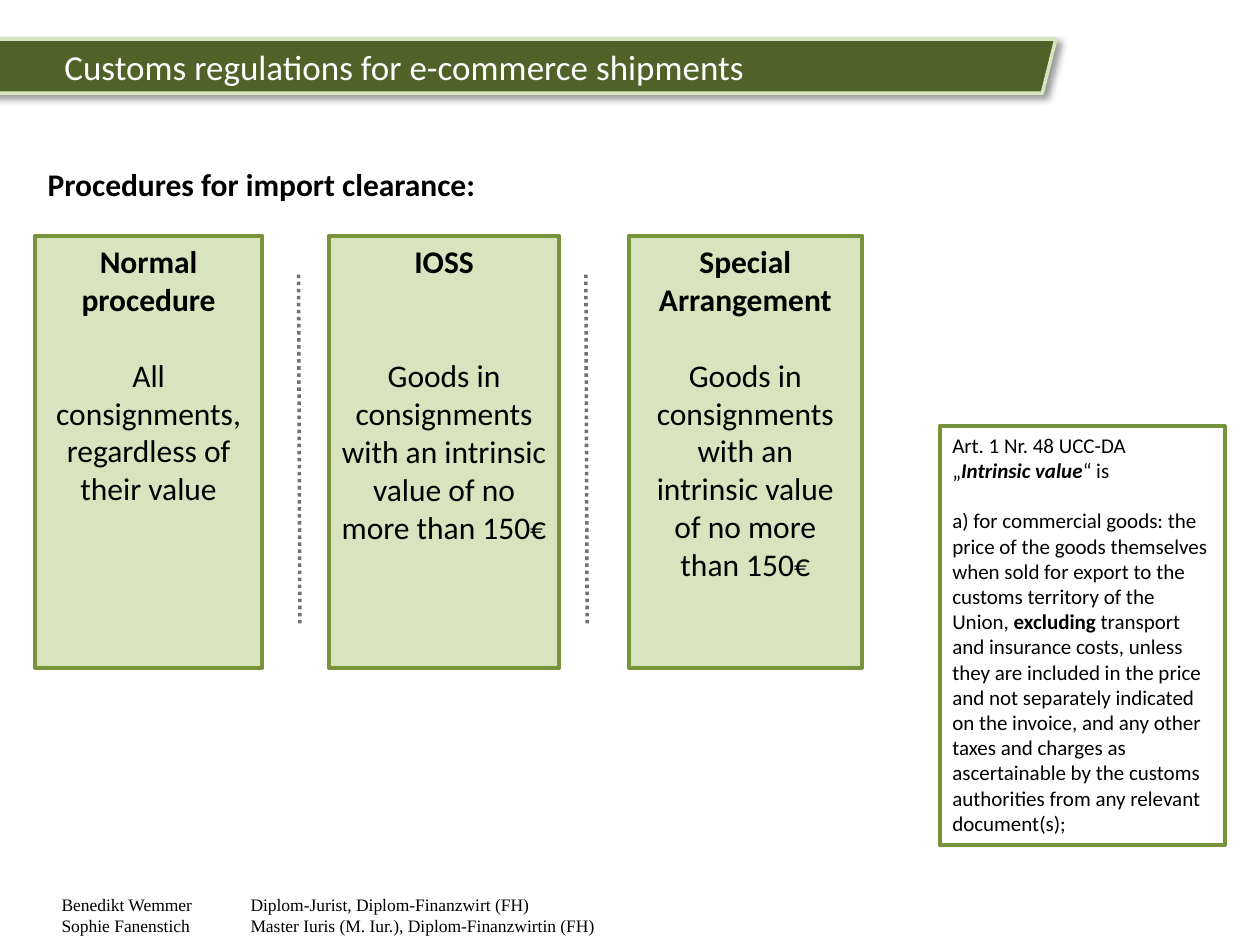
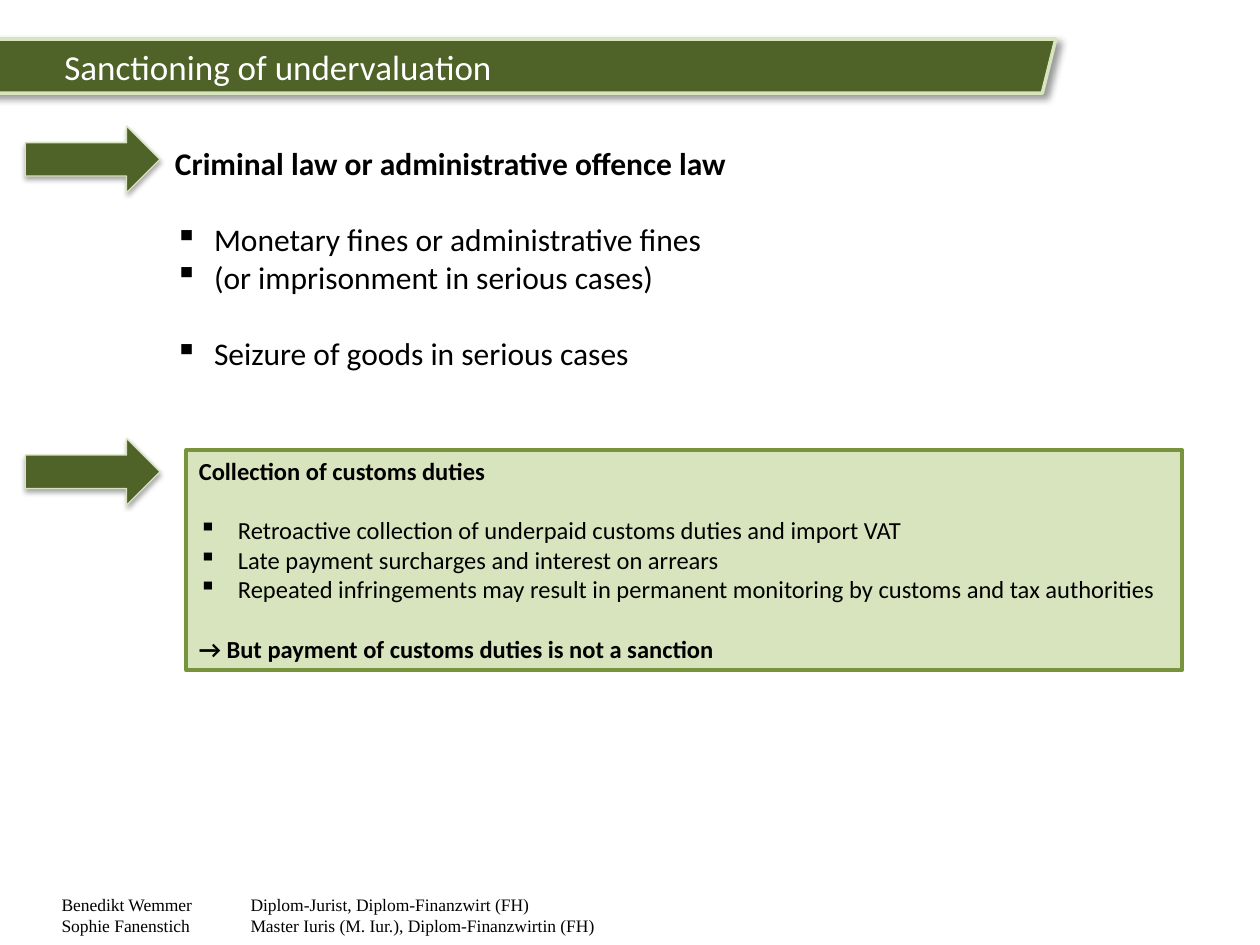
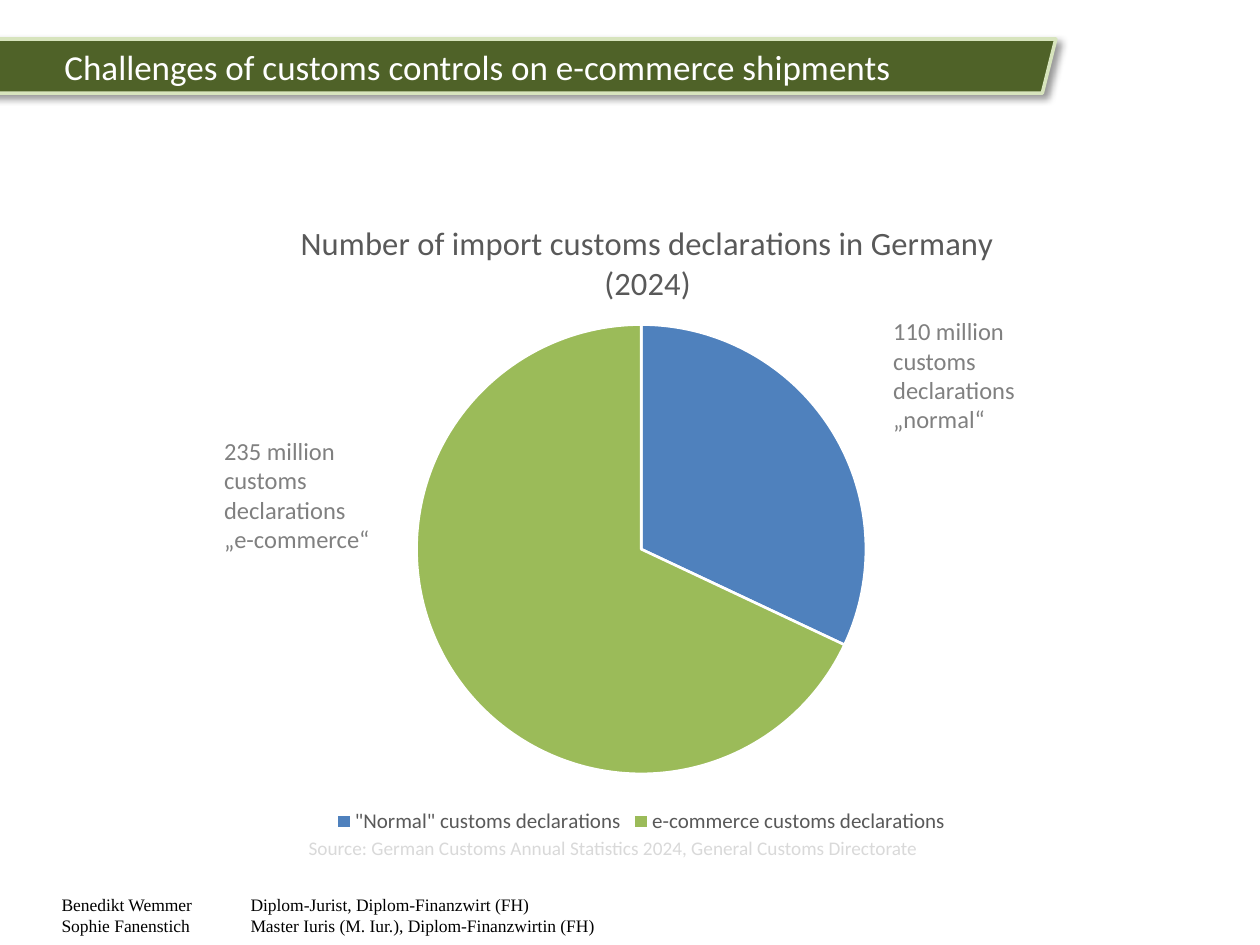
from lxml.etree import SubElement
from pptx import Presentation
from pptx.chart.data import CategoryChartData
from pptx.dml.color import RGBColor
from pptx.enum.chart import XL_CHART_TYPE, XL_LEGEND_POSITION
from pptx.enum.dml import MSO_LINE
from pptx.enum.shapes import MSO_CONNECTOR, MSO_SHAPE
from pptx.enum.text import MSO_ANCHOR, PP_ALIGN
from pptx.oxml.ns import qn
from pptx.util import Inches, Pt

DARK_GREEN = RGBColor(0x4F, 0x62, 0x28)
MID_GREEN = RGBColor(0x77, 0x93, 0x3C)
PALE_GREEN = RGBColor(0xD7, 0xE4, 0xBD)
PIE_BLUE = RGBColor(0x4F, 0x81, 0xBD)
PIE_GREEN = RGBColor(0x9B, 0xBB, 0x59)
SLATE = RGBColor(0x6C, 0x74, 0x7A)
DARK_GREY = RGBColor(0x59, 0x59, 0x59)
MID_GREY = RGBColor(0x80, 0x80, 0x80)
LIGHT_GREY = RGBColor(0xD9, 0xD9, 0xD9)
BLACK = RGBColor(0, 0, 0)
WHITE = RGBColor(0xFF, 0xFF, 0xFF)

LINE_HEIGHT = 1.22
INDENT = Inches(0.31)
BOLD = {"bold": True}
PANEL = {"fill": PALE_GREEN, "line": MID_GREEN, "width": 2.25}
# Shadows: opacity in percent, blur and distance in points, direction in degrees
BAND = {"fill": DARK_GREEN, "line": PALE_GREEN, "width": 2, "shadow": (40, 4, 3, 45)}
ARROW = {"fill": DARK_GREEN, "line": PALE_GREEN, "width": 0.75, "shadow": (35, 3.1, 1.8, 90)}

presentation = Presentation()
presentation.slide_width, presentation.slide_height = Inches(10), Inches(7.5)
# Square grid: 100 columns by 75 rows
CELL = presentation.slide_width // 100


def add_box(slide, box, preset=None, fill=None, line=None, width=1, shadow=None):
    """Add a preset shape, or a text box without one; box is in grid cells."""
    left, top, across, down = [int(cells * CELL) for cells in box]
    if preset is None:
        return slide.shapes.add_textbox(left, top, across, down)
    shape = slide.shapes.add_shape(preset, left, top, across, down)
    shape.shadow.inherit = False
    if fill is None:
        shape.fill.background()
    else:
        shape.fill.solid()
        shape.fill.fore_color.rgb = fill
    shape.line.color.rgb = line
    shape.line.width = Pt(width)
    if shadow:
        opacity, blur, distance, direction = shadow
        effects = shape._element.spPr.find(qn("a:effectLst"))
        outer = SubElement(effects, qn("a:outerShdw"), blurRad=str(Pt(blur)), dist=str(Pt(distance)),
                           dir=str(direction * 60000), algn="tl", rotWithShape="0")
        color = SubElement(outer, qn("a:srgbClr"), val="000000")
        SubElement(color, qn("a:alpha"), val=str(opacity * 1000))
    return shape


def write(shape, paragraphs, size, color=BLACK, font="Calibri", align=PP_ALIGN.LEFT,
          anchor=MSO_ANCHOR.TOP, wrap=True):
    """Each paragraph is (runs, lines of space before, bullet); each run is (text, format)."""
    frame = shape.text_frame
    frame.word_wrap = wrap
    frame.vertical_anchor = anchor
    for index, (runs, space, bullet) in enumerate(paragraphs):
        paragraph = frame.add_paragraph() if index else frame.paragraphs[0]
        paragraph.alignment = align
        paragraph.space_before = Pt(round(space * size * LINE_HEIGHT, 1))
        if bullet:
            properties = paragraph._p.get_or_add_pPr()
            properties.set("marL", str(INDENT))
            properties.set("indent", str(-INDENT))
            SubElement(properties, qn("a:buChar"), char="▪")
        for text, formats in runs:
            run = paragraph.add_run()
            run.text = text
            run.font.color.rgb = color
            for name, value in {"name": font, "size": Pt(size), **formats}.items():
                setattr(run.font, name, value)


# Shared by all slides: footer and title band
slides = []
for title in ("Customs regulations for e-commerce shipments",
              "Sanctioning of undervaluation",
              "Challenges of customs controls on e-commerce shipments"):
    slide = presentation.slides.add_slide(presentation.slide_layouts[6])
    footer = add_box(slide, (3.9, 70.5, 55.6, 4.4))
    write(footer, [([("Benedikt Wemmer\tDiplom-Jurist, Diplom-Finanzwirt (FH)", {})], 0, False),
                   ([("Sophie Fanenstich\tMaster Iuris (M. Iur.), Diplom-Finanzwirtin (FH)", {})], 0, False)],
          10, font="Times New Roman")
    for paragraph in footer.text_frame.paragraphs:
        tabs = SubElement(paragraph._p.get_or_add_pPr(), qn("a:tabLst"))
        SubElement(tabs, qn("a:tab"), pos=str(15 * CELL), algn="l")
    band = add_box(slide, (-3.6, 3.1, 87.4, 4.3), MSO_SHAPE.PARALLELOGRAM, **BAND)
    write(band, [([(title, {})], 0, False)], 20, WHITE, anchor=MSO_ANCHOR.MIDDLE)
    slides.append(slide)
procedures, sanctions, challenges = slides

# Slide 1: import procedures
for column in (23.7, 46.5):
    start_x, start_y, end_x, end_y = [int(cells * CELL) for cells in (column, 21.8, column + 0.1, 49.6)]
    divider = procedures.shapes.add_connector(MSO_CONNECTOR.STRAIGHT, start_x, start_y, end_x, end_y)
    divider.line.color.rgb = SLATE
    divider.line.width = Pt(2)
    divider.line.dash_style = MSO_LINE.ROUND_DOT
    SubElement(divider._element.spPr, qn("a:effectLst"))

for left, width, name, space, lines in (
        (2.8, 18, "Normal procedure", 1, ["All consignments, regardless of their value"]),
        (26.1, 18.3, "IOSS", 2, ["Goods in consignments with an intrinsic value of no more than 150€"]),
        (49.9, 18.5, "Special Arrangement", 1,
         ["Goods in consignments with an", "intrinsic value of no more", "than 150€"])):
    panel = add_box(procedures, (left, 18.7, width, 34.3), MSO_SHAPE.RECTANGLE, **PANEL)
    body = [([(line, {})], 0 if index else space, False) for index, line in enumerate(lines)]
    write(panel, [([(name, BOLD)], 0, False), *body], 18, align=PP_ALIGN.CENTER)

definition = add_box(procedures, (74.6, 33.8, 22.6, 33.3), MSO_SHAPE.RECTANGLE, line=MID_GREEN, width=2.25)
write(definition, [
    ([("Art. 1 Nr. 48 UCC-DA", {})], 0, False),
    ([("„", {}), ("Intrinsic value", {"bold": True, "italic": True}), ("“ is", {})], 0, False),
    ([("a) for commercial goods: the price of the goods themselves when sold for export to the "
       "customs territory of the Union, ", {}),
      ("excluding", BOLD),
      (" transport and insurance costs, unless they are included in the price and not separately "
       "indicated on the invoice, and any other taxes and charges as ascertainable by the customs "
       "authorities from any relevant document(s);", {})], 1, False)], 12)
heading = add_box(procedures, (2.8, 12.6, 52, 4))
write(heading, [([("Procedures for import clearance:", BOLD)], 0, False)], 18)

# Slide 2: sanctions and collection of duties
penalties = add_box(sanctions, (12.9, 10.9, 87.1, 28.3))
write(penalties, [
    ([("Criminal law or administrative offence law", BOLD)], 0, False),
    ([("Monetary fines or administrative fines", {})], 1, True),
    ([("(or imprisonment in serious cases)", {})], 0, True),
    ([("Seizure of goods in serious cases", {})], 1, True)], 18)
for top in (10, 34.8):
    add_box(sanctions, (2, top, 10.7, 5.3), MSO_SHAPE.RIGHT_ARROW, **ARROW)
collection = add_box(sanctions, (14.8, 35.7, 79, 17.5), MSO_SHAPE.RECTANGLE, **PANEL)
write(collection, [
    ([("Collection of customs duties", BOLD)], 0, False),
    ([("Retroactive collection of underpaid customs duties and import VAT", {})], 1, True),
    ([("Late payment surcharges and interest on arrears", {})], 0, True),
    ([("Repeated infringements may result in permanent monitoring by customs and tax authorities", {})],
     0, True),
    ([("→ But payment of customs duties is not a sanction", BOLD)], 1, False)], 14)

# Slide 3: share of e-commerce declarations
declarations = CategoryChartData()
declarations.categories = ['"Normal" customs declarations', "e-commerce customs declarations"]
declarations.add_series("Series 1", (32, 68))
chart_box = [int(cells * CELL) for cells in (11.6, 14.9, 78.6, 51.7)]
chart = challenges.shapes.add_chart(XL_CHART_TYPE.PIE, *chart_box, declarations).chart
chart.font.name, chart.font.size = "Calibri", Pt(10)
chart.has_title = True
chart.chart_title.include_in_layout = False
chart.chart_title.text_frame.text = "Number of import customs declarations in Germany (2024)"
chart.has_legend = True
chart.legend.position = XL_LEGEND_POSITION.BOTTOM
chart.legend.include_in_layout = False
title_font = chart.chart_title.text_frame.paragraphs[0].runs[0].font
for font, size in ((title_font, 18.6), (chart.legend.font, 12)):
    font.name, font.size, font.bold = "Calibri", Pt(size), False
    font.color.rgb = DARK_GREY
plot = chart.plots[0]
plot.vary_by_categories = True
for index, color in enumerate((PIE_BLUE, PIE_GREEN)):
    slice_format = plot.series[0].points[index].format
    slice_format.fill.solid()
    slice_format.fill.fore_color.rgb = color
    slice_format.line.color.rgb = WHITE
    slice_format.line.width = Pt(1.5)

# Fixed places inside the chart, as shares of its size
title_element = chart.chart_title._element
plot_area = chart._chartSpace.chart.plotArea
for parent, position, places in (
        (title_element, 1, {"xMode": "edge", "yMode": "edge", "x": 0.15, "y": 0.04}),
        (plot_area, 0, {"layoutTarget": "inner", "xMode": "edge", "yMode": "edge",
                        "x": 0.27, "y": 0.21, "w": 0.46, "h": 0.69})):
    for old_layout in parent.findall(qn("c:layout")):
        parent.remove(old_layout)
    layout = SubElement(parent, qn("c:layout"))
    parent.insert(position, layout)
    manual = SubElement(layout, qn("c:manualLayout"))
    for name, value in places.items():
        SubElement(manual, qn(f"c:{name}"), val=str(value))

for box, lines in (
        ((16.8, 34.1, 17, 12.5), ("235 million", "customs declarations", "„e-commerce“")),
        ((69.9, 24.6, 15.8, 13.5), ("110 million customs declarations", "„normal“"))):
    write(add_box(challenges, box), [([(line, {})], 0, False) for line in lines], 14, MID_GREY)
source = add_box(challenges, (23.5, 65.9, 50.9, 2.9))
write(source, [([("Source: German Customs Annual Statistics 2024, General Customs Directorate", {})], 0, False)],
      11, LIGHT_GREY, wrap=False)

presentation.save("out.pptx")
